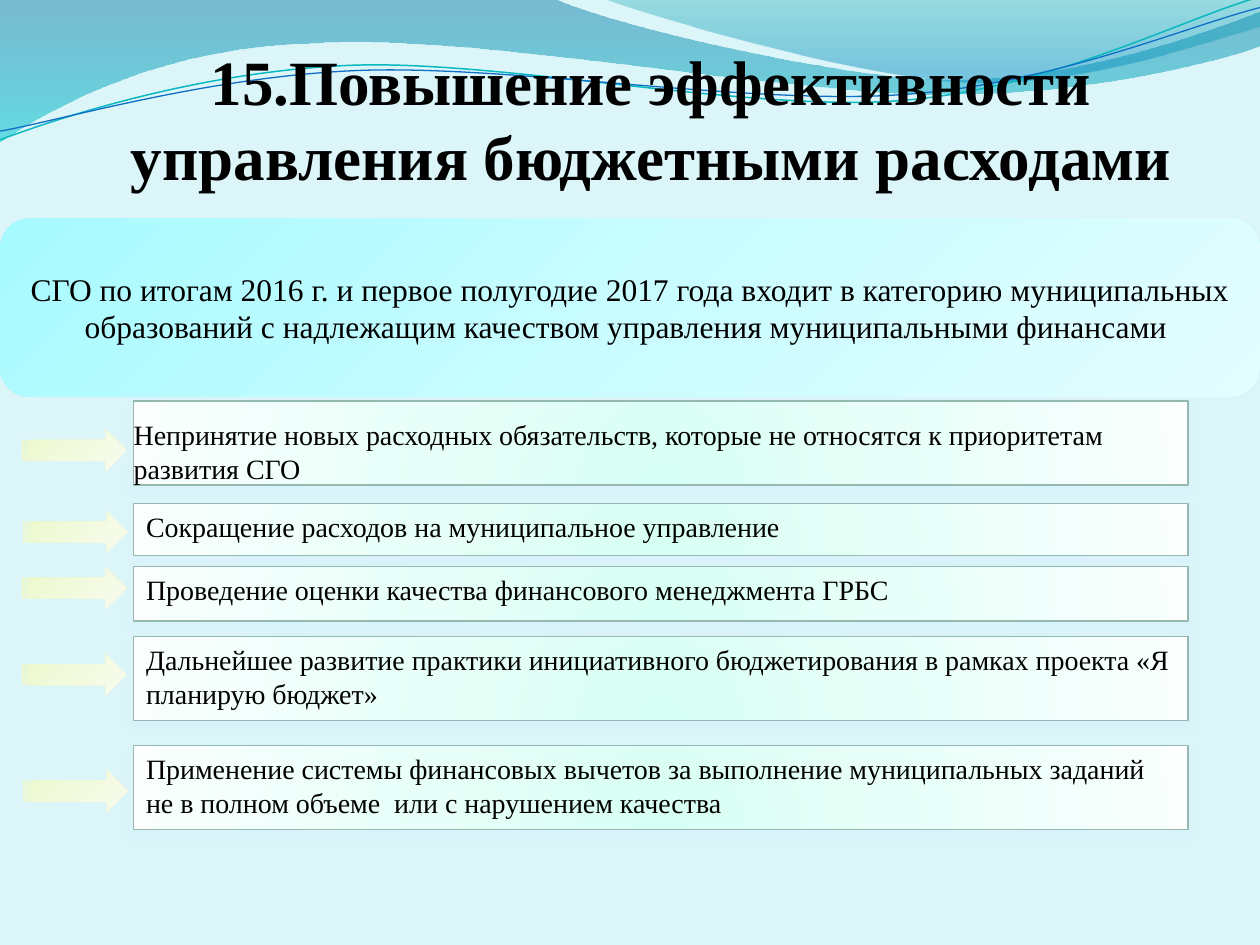
from dataclasses import dataclass

from lxml import etree
from pptx import Presentation
from pptx import util as u
from pptx.dml import color
from pptx.enum import shapes, text
from pptx.oxml import ns


@dataclass(frozen=True)
class Theme:
    font: str = "Times New Roman"
    title_size: int = 36
    banner_size: int = 18
    item_size: int = 16
    ink: str = "000000"
    background: str = "DBF5F9"
    teal_line: str = "0AB8BF"
    blue_line: str = "0F6FC6"
    item_line: str = "94B9B0"
    shadow: str = "D8F0FF"
    # Gradient stops: position %, colour, opacity %
    wide_wave: tuple = ((0, "0074A1", 45), (100, "00C6CF", 55))
    right_wave: tuple = ((0, "00A1A9", 30), (80, "008BBF", 45))
    banner: tuple = ((0, "A7FAFF", 100), (50, "C9FCFF", 100), (100, "E4FDFF", 100))
    item: tuple = ((0, "D8FFF4", 100), (43, "E7FFF8", 100),
                   (93, "F7FFFD", 100), (100, "FCFFFE", 100))
    arrow: tuple = ((0, "ECF8CA", 100), (50, "F2FADD", 100), (100, "F8FCEE", 100))


def add_xml(parent, tag, **attributes):
    values = {name: str(value) for name, value in attributes.items()}
    return etree.SubElement(parent, ns.qn(tag), values)


def add_colour(parent, rgb, opacity):
    colour = add_xml(parent, "a:srgbClr", val=rgb)
    if opacity < 100:
        add_xml(colour, "a:alpha", val=opacity * 1000)


def write_text(frame, content, *, font, size, rgb, bold=False,
               align=text.PP_ALIGN.LEFT, anchor=text.MSO_ANCHOR.TOP,
               insets=(7.2, 3.6, 7.2, 3.6)):
    frame.auto_size = text.MSO_AUTO_SIZE.NONE
    frame.word_wrap = True
    frame.vertical_anchor = anchor
    (frame.margin_left, frame.margin_top,
     frame.margin_right, frame.margin_bottom) = map(u.Pt, insets)
    paragraph = frame.paragraphs[0]
    paragraph.alignment = align
    run = paragraph.add_run()
    run.text = content
    run.font.name, run.font.size, run.font.bold = font, u.Pt(size), bold
    run.font.color.rgb = color.RGBColor.from_string(rgb)


def bend(shape, segments):
    """Turn each run of three lines that stands for a curve into that curve."""
    lines = shape._element.spPr.iter(ns.qn("a:lnTo"))
    lines = iter(list(lines))
    for segment in segments:
        group = [next(lines) for _ in range(len(segment) // 2)]
        if len(group) == 3:
            curve = etree.Element(ns.qn("a:cubicBezTo"))
            group[0].addprevious(curve)
            for line in group:
                curve.append(line[0])
                line.getparent().remove(line)


class SlideBuilder:
    def __init__(self, slide, theme):
        self.slide, self.theme = slide, theme
        fill = slide.background.fill
        fill.solid()
        fill.fore_color.rgb = color.RGBColor.from_string(theme.background)

    def outline(self, shape, rgb=None, width=0.75):
        if rgb is None:
            shape.line.fill.background()
            return
        shape.line.color.rgb = color.RGBColor.from_string(rgb)
        shape.line.width = u.Pt(width)

    def gradient(self, shape, stops, angle=None):
        """Linear at an angle, or circular when there is none."""
        shape.fill.solid()
        properties = shape._element.spPr
        gradient = etree.Element(ns.qn("a:gradFill"), rotWithShape="1")
        stop_list = add_xml(gradient, "a:gsLst")
        for position, rgb, opacity in stops:
            stop = add_xml(stop_list, "a:gs", pos=position * 1000)
            add_colour(stop, rgb, opacity)
        if angle is None:
            circle = add_xml(gradient, "a:path", path="circle")
            add_xml(circle, "a:fillToRect", l=50000, t=130000, r=50000, b=-30000)
        else:
            add_xml(gradient, "a:lin", ang=angle * 60000, scaled=0)
        properties.replace(properties.find(ns.qn("a:solidFill")), gradient)

    def wave(self, start, *segments, stops=None, line=None, width=0.75):
        """Lines are (x, y), cubic curves (x1, y1, x2, y2, x, y)."""
        points = [(u.Pt(segment[i]), u.Pt(segment[i + 1]))
                  for segment in segments for i in range(0, len(segment), 2)]
        builder = self.slide.shapes.build_freeform(*map(u.Pt, start), scale=1.0)
        builder.add_line_segments(points, close=stops is not None)
        shape = builder.convert_to_shape()
        bend(shape, segments)
        shape.shadow.inherit = False
        self.outline(shape, line, width)
        if stops:
            self.gradient(shape, stops, 90)
        else:
            shape.fill.background()
        # The waves are decoration of the layout, behind everything else
        self.slide.slide_layout.shapes._spTree.append(shape._element)

    def title(self, content, *box):
        title = self.slide.shapes.title
        title.left, title.top, title.width, title.height = map(u.Pt, box)
        write_text(title.text_frame, content, font=self.theme.font,
                   size=self.theme.title_size, rgb=self.theme.ink, bold=True,
                   align=text.PP_ALIGN.CENTER, anchor=text.MSO_ANCHOR.BOTTOM,
                   insets=(0, 3.6, 0, 0))

    def shape(self, kind, box, stops, angle=None, line=None):
        shape = self.slide.shapes.add_shape(kind, *map(u.Pt, box))
        shape.shadow.inherit = False
        self.gradient(shape, stops, angle)
        self.outline(shape, line)
        return shape

    def banner(self, content, *box):
        shape = self.shape(shapes.MSO_SHAPE.ROUNDED_RECTANGLE, box, self.theme.banner, 45)
        write_text(shape.text_frame, content, font=self.theme.font,
                   size=self.theme.banner_size, rgb=self.theme.ink,
                   align=text.PP_ALIGN.CENTER, anchor=text.MSO_ANCHOR.MIDDLE)

    def item(self, content, top, height, **layout):
        shape = self.shape(shapes.MSO_SHAPE.RECTANGLE, (76.4, top, 602.6, height),
                           self.theme.item, line=self.theme.item_line)
        effects = shape._element.spPr.find(ns.qn("a:effectLst"))
        shadow = add_xml(effects, "a:outerShdw", blurRad=u.Pt(4.5), dist=u.Pt(3),
                         dir=90 * 60000, rotWithShape=0)
        add_colour(shadow, self.theme.shadow, 48)
        write_text(shape.text_frame, content, font=self.theme.font,
                   size=self.theme.item_size, rgb=self.theme.ink, **layout)

    def arrow(self, left, top):
        self.shape(shapes.MSO_SHAPE.STRIPED_RIGHT_ARROW, (left, top, 59.6, 23.8),
                   self.theme.arrow, 45)


def main():
    theme = Theme()
    presentation = Presentation()
    presentation.slide_width, presentation.slide_height = u.Pt(720), u.Pt(540)
    slide = presentation.slides.add_slide(presentation.slide_layouts[5])
    builder = SlideBuilder(slide, theme)

    # Waves along the top
    builder.wave((0, 0), (316.8, -0.7), (342.7, 12.2, 478, 45.4, 545.8, 45.4),
                 (614.2, 45.4, 689.8, 18.7, 720, 6.5), (720.7, 25.9),
                 (707.8, 31.7, 626.4, 54.7, 537.1, 54),
                 (447.8, 54, 275, 20.2, 185, 24.5),
                 (92.9, 25.9, 33.1, 59.8, -0.7, 81.4), stops=theme.wide_wave)
    builder.wave((344.9, -0.7), (366.5, 7.9, 491, 44.6, 553.7, 46.8),
                 (616.3, 49.7, 691.9, 23, 720, 15.1), (720, 0), stops=theme.right_wave)
    builder.wave((0, 79.9), (34.6, 67, 113.8, 41, 199.4, 37.4),
                 (284.4, 33.8, 427, 64.1, 513.4, 57.6),
                 (599.8, 51.1, 675.4, 10.8, 718.6, -1.4), line=theme.teal_line, width=0.85)
    builder.wave((0, 74.9), (33.8, 69.1, 118.1, 43.9, 203.8, 40.3),
                 (290.2, 36.7, 429.8, 60.5, 516.2, 54),
                 (601.9, 48.2, 677.5, 15.1, 720, 4.3), line=theme.blue_line)

    # Title, first measure and banner
    builder.title("15.Повышение эффективности управления бюджетными расходами",
                  48, 20.6, 648, 90)
    builder.item("Непринятие новых расходных обязательств, которые не относятся "
                 "к приоритетам развития СГО", 229.2, 48,
                 anchor=text.MSO_ANCHOR.BOTTOM, insets=(0, 0, 0, 0))
    builder.banner("СГО по итогам 2016 г. и первое полугодие 2017 года входит в категорию "
                   "муниципальных образований с надлежащим качеством управления "
                   "муниципальными финансами ", 0, 124.6, 720, 102.2)

    # Other measures: top, height, wording
    measures = (
        (287.7, 30, "Сокращение расходов на муниципальное управление"),
        (323.7, 31.2, "Проведение оценки качества финансового менеджмента ГРБС"),
        (363.6, 48, "Дальнейшее развитие практики инициативного бюджетирования "
         "в рамках проекта «Я планирую бюджет»"),
        (425.9, 48, "Применение системы финансовых вычетов за выполнение "
         "муниципальных заданий не в полном объеме  или с нарушением качества"),
    )
    for top, height, wording in measures:
        builder.item(wording, top, height)

    # Arrows beside the measures
    for left, top in ((12.7, 245.4), (13.4, 292.2), (12.7, 324.2),
                      (12.7, 373.6), (13.4, 440.2)):
        builder.arrow(left, top)

    presentation.save("out.pptx")


if __name__ == "__main__":
    main()
